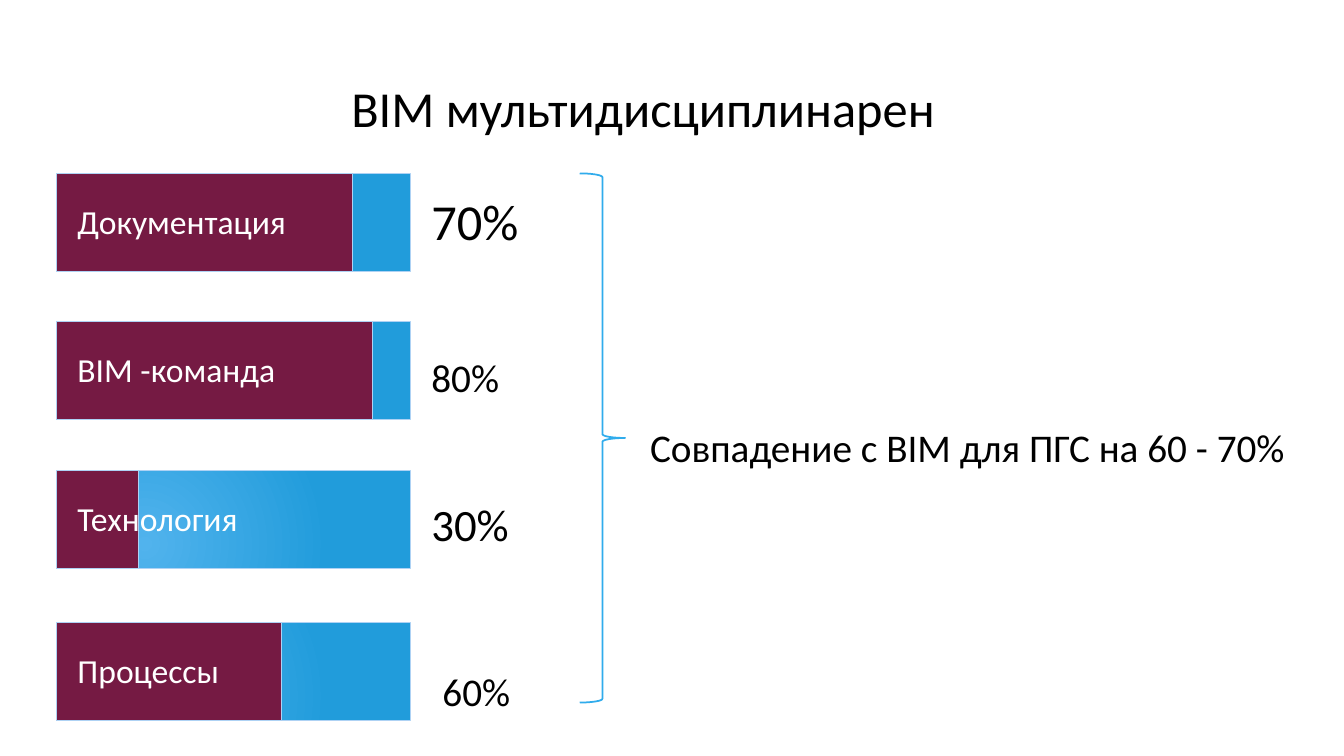
"""Build the slide on how far BIM overlaps across disciplines."""
import pptx
import pptx.dml.color
import pptx.enum.shapes
import pptx.enum.text
import pptx.oxml
import pptx.oxml.ns
import pptx.util

PX = 9144
SHAPES = pptx.enum.shapes.MSO_SHAPE
MIDDLE = pptx.enum.text.MSO_ANCHOR.MIDDLE
CENTER = pptx.enum.text.PP_ALIGN.CENTER
BAR_LEFT, BAR_WIDTH, BAR_HEIGHT = 56, 351, 97
RADIAL = (
    f'<a:path {pptx.oxml.ns.nsdecls("a")} path="circle">'
    '<a:fillToRect l="50000" t="100000" r="100000" b="50000"/></a:path>'
)


def add_outline(kind, left, top, width, height, line_color, line_width):
    shape = page.shapes.add_shape(kind, left * PX, top * PX, width * PX, height * PX)
    shape.shadow.inherit = False
    shape.line.color.rgb = pptx.dml.color.RGBColor.from_string(line_color)
    shape.line.width = pptx.util.Pt(line_width)
    return shape


def add_text(text, left, top, width, size, color="000000", wrap=True):
    height = size * 7 // 4 + 8
    box = page.shapes.add_textbox(left * PX, top * PX, width * PX, height * PX)
    box.text_frame.word_wrap = wrap
    para = box.text_frame.paragraphs[0]
    para.text = text
    para.font.name = "Calibri"
    para.font.size = pptx.util.Pt(size)
    para.font.color.rgb = pptx.dml.color.RGBColor.from_string(color)
    return box


deck = pptx.Presentation()
deck.slide_width, deck.slide_height = 1333 * PX, 750 * PX
page = deck.slides.add_slide(deck.slide_layouts[6])

title = add_text("BIM мультидисциплинарен", 161, 71, 954, 36)
title.text_frame.vertical_anchor = MIDDLE
title.text_frame.paragraphs[0].alignment = CENTER

rows = [
    ("Документация", 172, 294, "70%", 36, 418, 184),
    ("BIM -команда", 319, 314, "80%", 28, 418, 346),
    ("Технология", 467, 81, "30%", 32, 418, 488),
    ("Процессы", 618, 223, "60%", 28, 429, 657),
]
for label, top, share_width, percent, size, percent_left, percent_top in rows:
    track = add_outline(SHAPES.RECTANGLE, BAR_LEFT, top, BAR_WIDTH, BAR_HEIGHT, "AED2F4", 0.75)
    track.fill.gradient()
    for stop, color in zip(track.fill.gradient_stops, ("51B3ED", "219CDB")):
        stop.color.rgb = pptx.dml.color.RGBColor.from_string(color)
    gradient = track.element.spPr.find(pptx.oxml.ns.qn("a:gradFill"))
    linear = gradient.find(pptx.oxml.ns.qn("a:lin"))
    gradient.replace(linear, pptx.oxml.parse_xml(RADIAL))

    share = add_outline(SHAPES.RECTANGLE, BAR_LEFT, top, share_width, BAR_HEIGHT, "AED2F4", 0.75)
    share.fill.solid()
    share.fill.fore_color.rgb = pptx.dml.color.RGBColor.from_string("751A43")

    add_text(label, 67, top + 22, 341, 24, "FFFFFF")
    add_text(percent, percent_left, percent_top, 2 * size + 36, size, wrap=False)

brace = add_outline(SHAPES.RIGHT_BRACE, 575, 172, 45, 525, "30ACEC", 1.25)
brace.fill.background()
add_text("Совпадение с BIM для ПГС на 60 - 70%", 635, 415, 677, 28)

deck.save("out.pptx")
